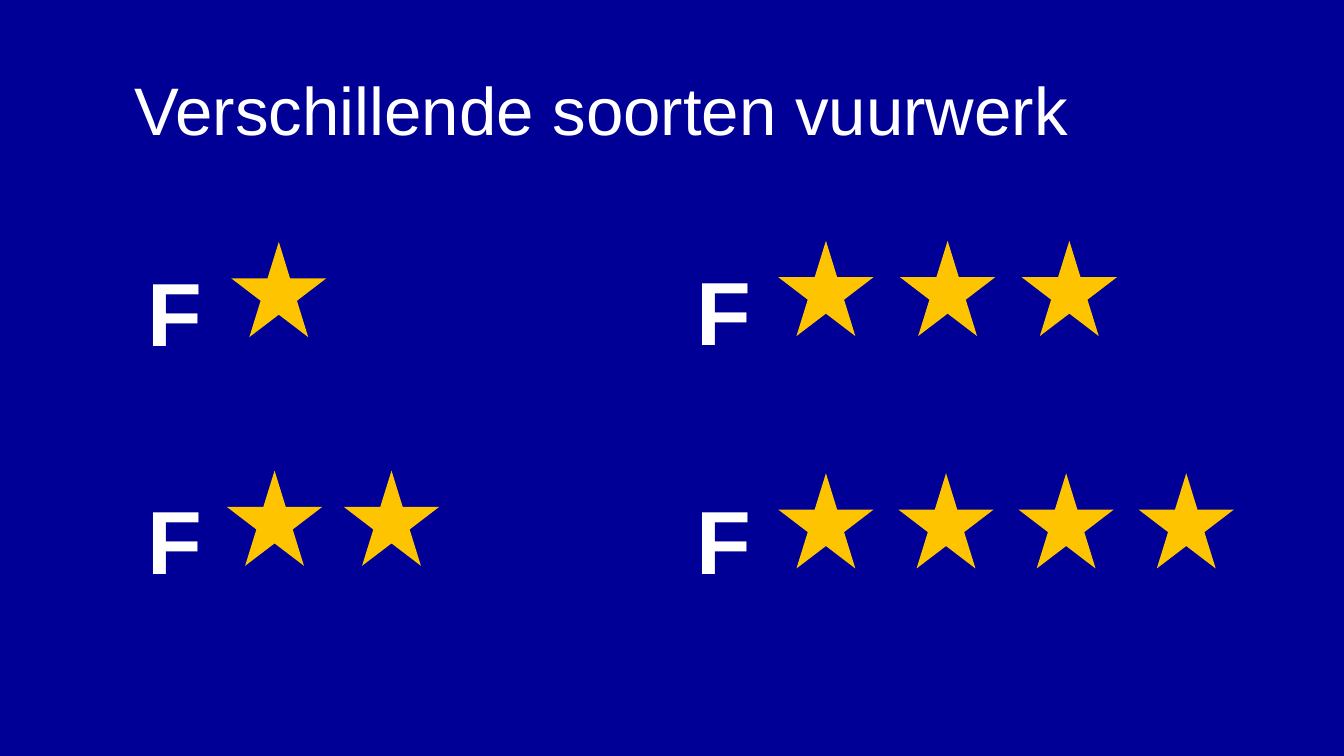
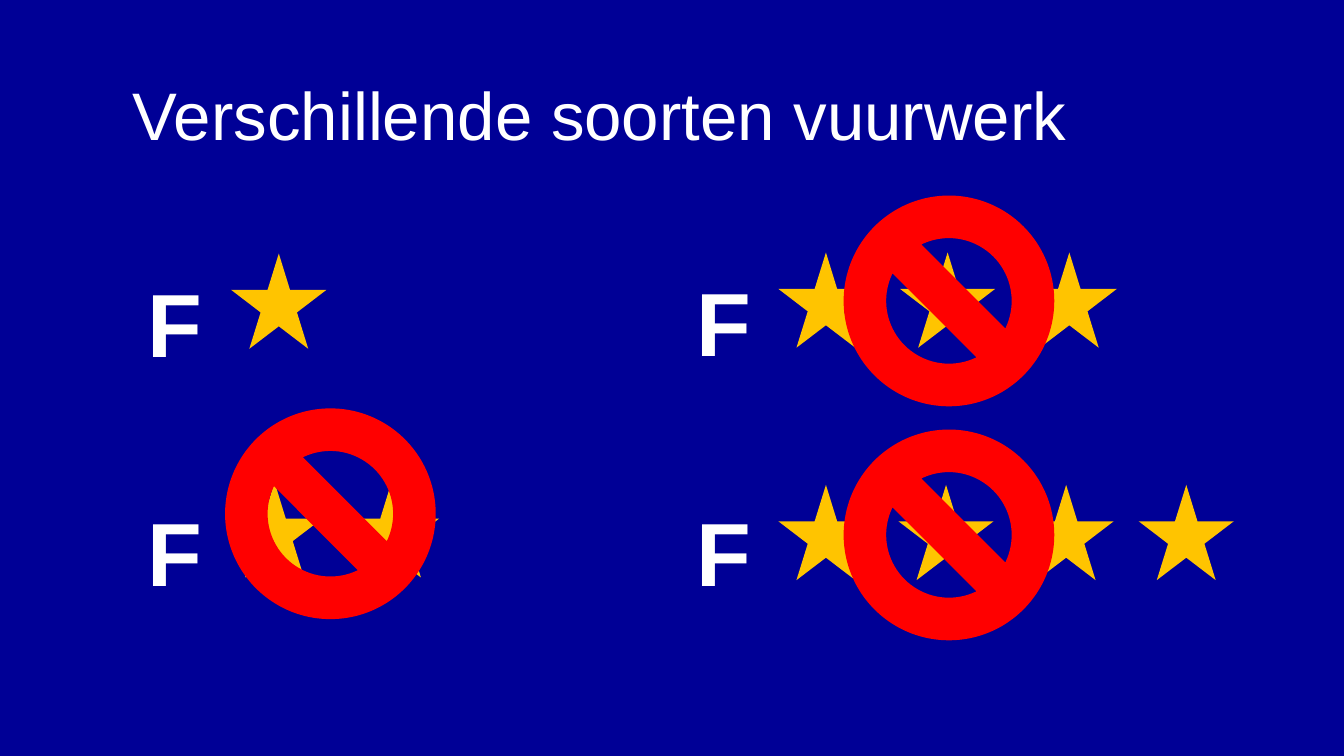
from pptx import Presentation
from pptx import util as u
from pptx.dml import color
from pptx.enum import shapes, text

COLORS = {"blue": "000096", "white": "FFFFFF", "gold": "FFC400", "red": "FF0000"}
CATEGORIES = [
    {"letter": (2.54, 4.72), "star": (4.37, 4.57), "count": 1, "pitch": 0},
    {"letter": (2.54, 9.04), "star": (4.29, 8.89), "count": 2, "pitch": 2.21},
    {"letter": (12.9, 4.7), "star": (14.71, 4.55), "count": 3, "pitch": 2.3},
    {"letter": (12.9, 9.04), "star": (14.71, 8.94), "count": 4, "pitch": 2.27},
]
BANS = [(15.98, 3.73), (15.98, 8.15), (4.29, 7.75)]


class Deck:
    """Hold the style and the current slide, and draw each kind of element."""

    font = "Arial"
    star_size = 1.8
    ban_size = 3.91

    def __init__(self):
        self.presentation = Presentation()
        self.presentation.slide_width = u.Cm(25.4)
        self.presentation.slide_height = u.Cm(14.28)
        self.slide = None

    def add_slide(self):
        self.slide = self.presentation.slides.add_slide(self.presentation.slide_layouts[6])
        self.add_shape(shapes.MSO_SHAPE.RECTANGLE, 0, 0, 25.4, 14.28, "blue")

    def add_shape(self, kind, left, top, width, height, fill):
        shape = self.slide.shapes.add_shape(kind, *map(u.Cm, (left, top, width, height)))
        shape.shadow.inherit = False
        shape.fill.solid()
        shape.fill.fore_color.rgb = color.RGBColor.from_string(COLORS[fill])
        shape.line.fill.background()
        return shape

    def add_text(self, words, left, top, width, height, size):
        shape = self.slide.shapes.add_textbox(*map(u.Cm, (left, top, width, height)))
        paragraph = shape.text_frame.paragraphs[0]
        paragraph.text = words
        paragraph.font.name = self.font
        paragraph.font.size = u.Pt(size)
        paragraph.font.color.rgb = color.RGBColor.from_string(COLORS["white"])
        return shape.text_frame

    def add_title(self, words, left, top):
        frame = self.add_text(words, left, top, 18.59, 2.39, 36)
        frame.word_wrap = True
        frame.vertical_anchor = text.MSO_ANCHOR.MIDDLE
        frame.margin_left = frame.margin_right = frame.margin_top = frame.margin_bottom = 0

    def add_letter(self, left, top):
        frame = self.add_text("F", left, top, 1.55, 2.31, 48)
        frame.word_wrap = False
        frame.auto_size = text.MSO_AUTO_SIZE.SHAPE_TO_FIT_TEXT
        frame.paragraphs[0].alignment = text.PP_ALIGN.CENTER
        frame.paragraphs[0].font.bold = True

    def add_stars(self, left, top, count, pitch):
        for index in range(count):
            self.add_shape(shapes.MSO_SHAPE.STAR_5_POINT, left + index * pitch, top,
                           self.star_size, self.star_size, "gold")

    def add_ban(self, left, top):
        shape = self.add_shape(shapes.MSO_SHAPE.NO_SYMBOL, left, top,
                               self.ban_size, self.ban_size, "red")
        shape.line.color.rgb = color.RGBColor.from_string(COLORS["red"])
        shape.line.width = u.Pt(2)

    def add_categories(self, title_left, title_top, shift=0):
        self.add_slide()
        self.add_title("Verschillende soorten vuurwerk", title_left, title_top)
        for category in CATEGORIES:
            left, top = category["star"]
            self.add_stars(left, top + shift, category["count"], category["pitch"])
        for category in CATEGORIES:
            left, top = category["letter"]
            self.add_letter(left, top + shift)


def main():
    deck = Deck()
    deck.add_categories(2.54, 0.86)
    deck.add_categories(2.51, 0.95, shift=0.22)
    for left, top in BANS:
        deck.add_ban(left, top)
    deck.presentation.save("out.pptx")


if __name__ == "__main__":
    main()
